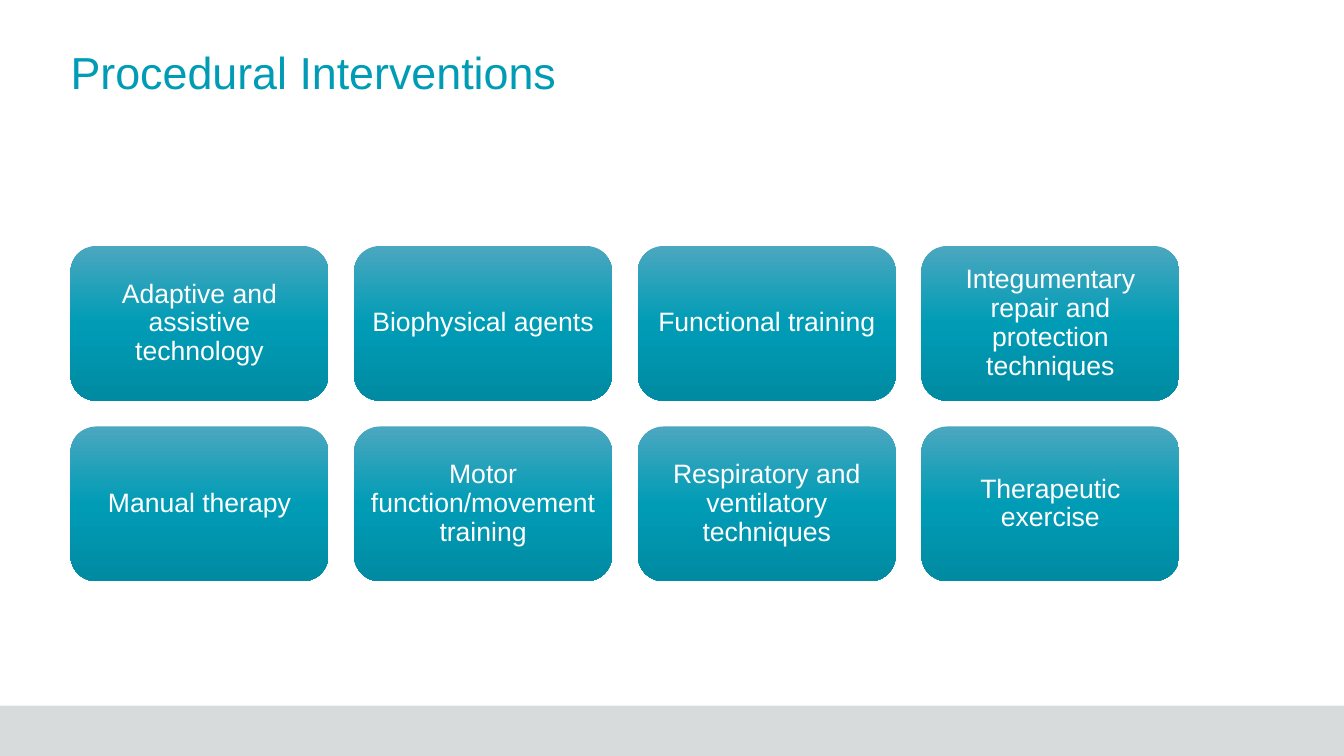
import copy

import pptx
import pptx.dml.color
import pptx.enum.shapes
import pptx.enum.text
import pptx.oxml.ns
import pptx.util

Pt = pptx.util.Pt
SHAPES = pptx.enum.shapes.MSO_SHAPE
PAGE_WIDTH, PAGE_HEIGHT = 960, 540
TEAL, WHITE, GREY = "009CB6", "FFFFFF", "D8DBDB"
CARD_GRADIENT = [(0, "4BA7BF"), (0.5, TEAL), (1, "008BA2")]
INTERVENTIONS = [
    "Adaptive and assistive technology",
    "Biophysical agents",
    "Functional training",
    "Integumentary repair and protection techniques",
    "Manual therapy",
    "Motor function/movement training",
    "Respiratory and ventilatory techniques",
    "Therapeutic exercise",
]


def colour(hex_text):
    return pptx.dml.color.RGBColor.from_string(hex_text)


def add_plain_shape(page, kind, left, top, width, height):
    """Add a preset shape without shadow or outline."""
    shape = page.shapes.add_shape(kind, Pt(left), Pt(top), Pt(width), Pt(height))
    shape.shadow.inherit = False
    shape.line.fill.background()
    return shape


def write_text(shape, text, size, hex_text, inset, anchor, alignment):
    frame = shape.text_frame
    frame.word_wrap = True
    frame.vertical_anchor = anchor
    frame.margin_left = frame.margin_right = Pt(inset)
    frame.margin_top = frame.margin_bottom = Pt(inset)
    para = frame.paragraphs[0]
    para.text = text
    para.alignment = alignment
    para.line_spacing = 0.9
    para.font.name = "Arial"
    para.font.size = Pt(size)
    para.font.color.rgb = colour(hex_text)


def fill_gradient(shape, stops):
    """Fill from top to bottom with (position, colour) stops."""
    shape.fill.gradient()
    shape.fill.gradient_angle = 270
    stop_list = shape._element.spPr.find(".//" + pptx.oxml.ns.qn("a:gsLst"))
    while len(stop_list) < len(stops):
        stop_list.append(copy.deepcopy(stop_list[0]))
    for stop, (position, hex_text) in zip(shape.fill.gradient_stops, stops):
        stop.position = position
        stop.color.rgb = colour(hex_text)


def add_footer_band(page, left, top, width, height):
    band = add_plain_shape(page, SHAPES.RECTANGLE, left, top, width, height)
    band.fill.solid()
    band.fill.fore_color.rgb = colour(GREY)


def add_title(page, text, left, top, width, height):
    box = page.shapes.add_textbox(Pt(left), Pt(top), Pt(width), Pt(height))
    write_text(box, text, 32, TEAL, 0, pptx.enum.text.MSO_ANCHOR.TOP,
               pptx.enum.text.PP_ALIGN.LEFT)


def add_card_grid(page, labels, left, top, width, columns=4):
    """Lay out cards in rows; gaps are a tenth of a card's width."""
    card_width = width / (columns + 0.1 * (columns - 1))
    card_height = 0.6 * card_width
    gap = 0.1 * card_width
    for index, label in enumerate(labels):
        row, column = divmod(index, columns)
        card = add_plain_shape(page, SHAPES.ROUNDED_RECTANGLE,
                               left + column * (card_width + gap),
                               top + row * (card_height + gap),
                               card_width, card_height)
        fill_gradient(card, CARD_GRADIENT)
        write_text(card, label, 19, WHITE, 5.7, pptx.enum.text.MSO_ANCHOR.MIDDLE,
                   pptx.enum.text.PP_ALIGN.CENTER)


def main():
    deck = pptx.Presentation()
    deck.slide_width, deck.slide_height = Pt(PAGE_WIDTH), Pt(PAGE_HEIGHT)
    page = deck.slides.add_slide(deck.slide_layouts[6])
    add_footer_band(page, 0, 504, PAGE_WIDTH, 36)
    add_title(page, "Procedural Interventions", 50.4, 36, 792, 72)
    add_card_grid(page, INTERVENTIONS, 50.4, 175.7, 792)
    deck.save("out.pptx")


if __name__ == "__main__":
    main()
